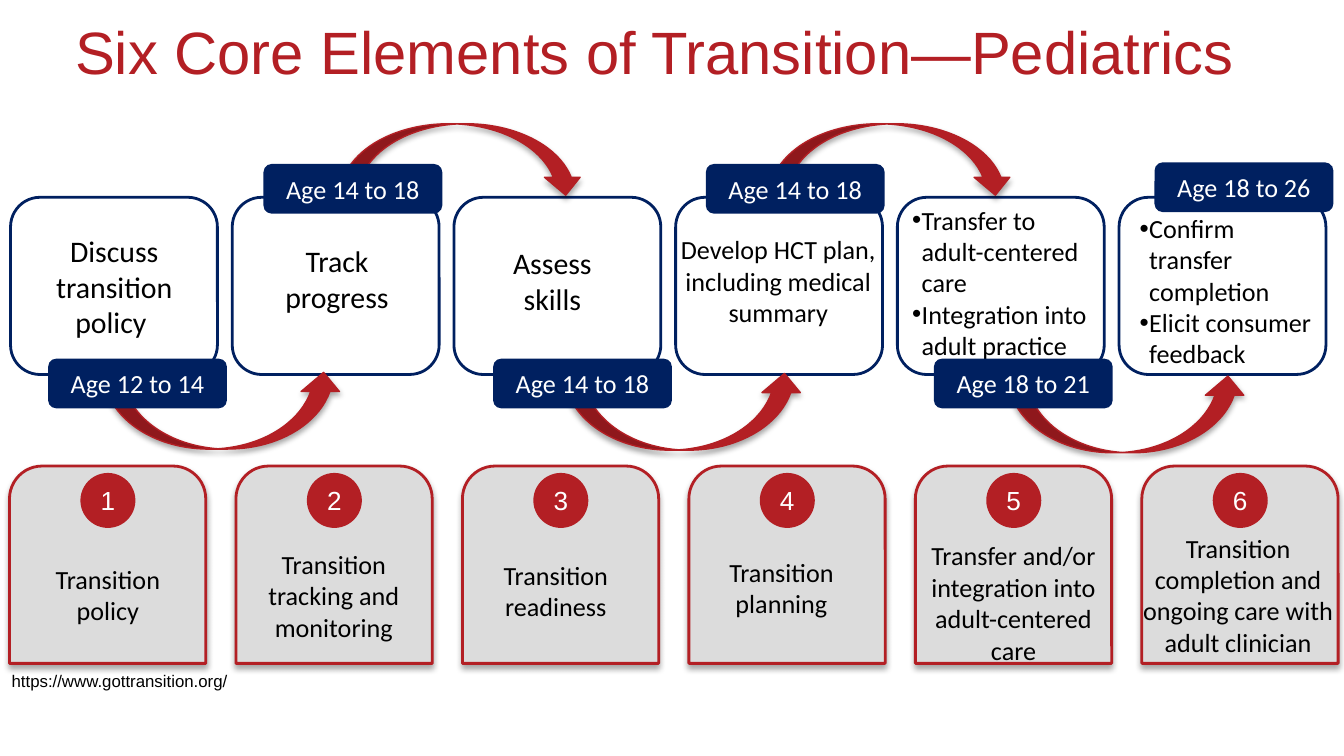
from lxml import etree
from pptx import Presentation
from pptx.dml.color import RGBColor
from pptx.enum.shapes import MSO_SHAPE
from pptx.enum.text import MSO_ANCHOR, PP_ALIGN
from pptx.oxml.ns import qn
from pptx.util import Cm, Pt

RED = RGBColor(0xB3, 0x1F, 0x24)
NAVY = RGBColor(0x00, 0x20, 0x60)
GREY = RGBColor(0xDC, 0xDC, 0xDC)
BLACK = RGBColor(0, 0, 0)
WHITE = RGBColor(0xFF, 0xFF, 0xFF)

ROUND_RECT = MSO_SHAPE.ROUNDED_RECTANGLE
ROUND_TOP = MSO_SHAPE.ROUND_2_SAME_RECTANGLE
OVAL = MSO_SHAPE.OVAL
ARROW_UP = MSO_SHAPE.CURVED_UP_ARROW
ARROW_DOWN = MSO_SHAPE.CURVED_DOWN_ARROW
LEFT, CENTER = PP_ALIGN.LEFT, PP_ALIGN.CENTER
TOP, MIDDLE = MSO_ANCHOR.TOP, MSO_ANCHOR.MIDDLE

BULLET_INDENT = Cm(0.18)

# Boxes are (left, top, width, height) in centimetres.
STEP_TEXTS = [
    ("Discuss transition policy ", 16, (0.74, 4.27, 2.84, 2.31)),
    ("Track progress", 16, (4.95, 4.47, 2.84, 1.63)),
    ("Assess skills", 16, (9.02, 4.5, 2.84, 1.63)),
    ("Develop HCT plan, including medical summary", 14, (12.6, 4.29, 4.22, 2.06)),
]
STEP_BULLETS = [
    (["Transfer to adult-centered care", "Integration into adult practice"],
     (16.99, 3.73, 3.91, 3.25)),
    (["Confirm transfer completion", "Elicit consumer feedback"],
     (21.29, 3.89, 3.91, 3.25)),
]
AGE_TAGS = [
    ("Age 12 to 14", 0.91, 6.78),
    ("Age 14 to 18", 4.98, 3.1),
    ("Age 14 to 18", 9.32, 6.78),
    ("Age 14 to 18", 13.34, 3.1),
    ("Age 18 to 21", 17.65, 6.78),
    ("Age 18 to 26", 21.82, 3.07),
]
ARROWS = [
    (ARROW_UP, (1.96, 7.04, 4.52, 1.45)),
    (ARROW_DOWN, (6.43, 2.34, 4.6, 1.35)),
    (ARROW_UP, (10.67, 7.06, 4.52, 1.45)),
    (ARROW_DOWN, (14.55, 2.34, 4.6, 1.35)),
    (ARROW_UP, (19.05, 7.11, 4.52, 1.45)),
]
CARD_TEXTS = [
    ("Transition policy", (0.25, 10.52, 3.58, 1.45)),
    ("Transition tracking and monitoring", (4.52, 10.24, 3.58, 2.06)),
    ("Transition readiness", (8.74, 10.44, 3.53, 1.45)),
    ("Transition planning", (12.93, 10.39, 3.68, 1.45)),
    ("Transfer and/or integration into adult-centered care",
     (17.07, 10.08, 4.17, 2.64)),
    ("Transition completion and ongoing care with adult clinician",
     (21.29, 9.93, 4.22, 2.64)),
]


def add_run(p, text, size, color, font):
    r = p.add_run()
    r.text = text
    r.font.size = Pt(size)
    r.font.name = font
    r.font.color.rgb = color


def add_bullet(p):
    pPr = p._p.get_or_add_pPr()
    pPr.set("marL", str(BULLET_INDENT))
    pPr.set("indent", str(-BULLET_INDENT))
    etree.SubElement(pPr, qn("a:buFont"), typeface="Arial")
    etree.SubElement(pPr, qn("a:buChar"), char="•")
    tabs = etree.SubElement(pPr, qn("a:tabLst"))
    etree.SubElement(tabs, qn("a:tab"), pos=str(BULLET_INDENT), algn="l")


def add_text(slide, lines, box, size=14, color=BLACK, font="Calibri",
             align=CENTER, anchor=TOP, wrap=True, bullets=False):
    tf = slide.shapes.add_textbox(*map(Cm, box)).text_frame
    tf.word_wrap = wrap
    tf.vertical_anchor = anchor
    for i, line in enumerate(lines):
        p = tf.add_paragraph() if i else tf.paragraphs[0]
        p.alignment = align
        if bullets:
            add_bullet(p)
        add_run(p, line, size, color, font)


def add_soft_shadow(sp):
    """Give the shape a small shadow straight below it."""
    sp.shadow.inherit = False
    effects = sp._element.spPr.find(qn("a:effectLst"))
    shadow = etree.SubElement(effects, qn("a:outerShdw"), blurRad="40000",
                              dist="23000", dir="5400000", rotWithShape="0")
    color = etree.SubElement(shadow, qn("a:srgbClr"), val="000000")
    etree.SubElement(color, qn("a:alpha"), val="35000")


def add_shape(slide, kind, box, fill=None, line=None, width=1.5, shadow=False):
    sp = slide.shapes.add_shape(kind, *map(Cm, box))
    sp.shadow.inherit = False
    if shadow:
        add_soft_shadow(sp)
    if fill is None:
        sp.fill.background()
    else:
        sp.fill.solid()
        sp.fill.fore_color.rgb = fill
    if line is None:
        sp.line.fill.background()
    else:
        sp.line.color.rgb = line
        sp.line.width = Pt(width)
    return sp


def add_label(slide, kind, box, fill, text, font):
    """Filled shape with one centred line of white text."""
    tf = add_shape(slide, kind, box, fill).text_frame
    tf.margin_left = tf.margin_right = tf.margin_top = tf.margin_bottom = 0
    tf.vertical_anchor = MIDDLE
    p = tf.paragraphs[0]
    p.alignment = CENTER
    add_run(p, text, 14, WHITE, font)


def add_steps(slide):
    for i in range(6):
        add_shape(slide, ROUND_RECT, (0.2 + 4.19 * i, 3.73, 3.91, 3.35), line=NAVY)
    for text, size, box in STEP_TEXTS:
        add_text(slide, [text], box, size)
    for lines, box in STEP_BULLETS:
        add_text(slide, lines, box, align=LEFT, bullets=True)
    for kind, box in ARROWS:
        add_shape(slide, kind, box, RED, RED, 0.75, shadow=True)
    for text, left, top in AGE_TAGS:
        add_label(slide, ROUND_RECT, (left, top, 3.38, 0.94), NAVY, text, "Calibri")


def add_cards(slide):
    for i, (text, box) in enumerate(CARD_TEXTS):
        add_shape(slide, ROUND_TOP, (0.18 + 4.28 * i, 8.81, 3.71, 3.73),
                  GREY, RED, shadow=True)
        add_text(slide, [text], box)
        add_label(slide, OVAL, (1.52 + 4.28 * i, 8.94, 1.04, 1.04),
                  RED, str(i + 1), "Arial")


def main():
    prs = Presentation()
    prs.slide_width, prs.slide_height = Cm(25.4), Cm(14.29)
    slide = prs.slides.add_slide(prs.slide_layouts[6])
    add_text(slide, ["Six Core Elements of Transition—Pediatrics"],
             (1.17, 0.2, 22.86, 1.5), 32, RED, "Arial", LEFT, MIDDLE)
    add_steps(slide)
    add_cards(slide)
    add_text(slide, ["https://www.gottransition.org/"],
             (-0.03, 12.55, 4.65, 0.64), 9, font="Arial", align=LEFT, wrap=False)
    prs.save("out.pptx")


if __name__ == "__main__":
    main()
